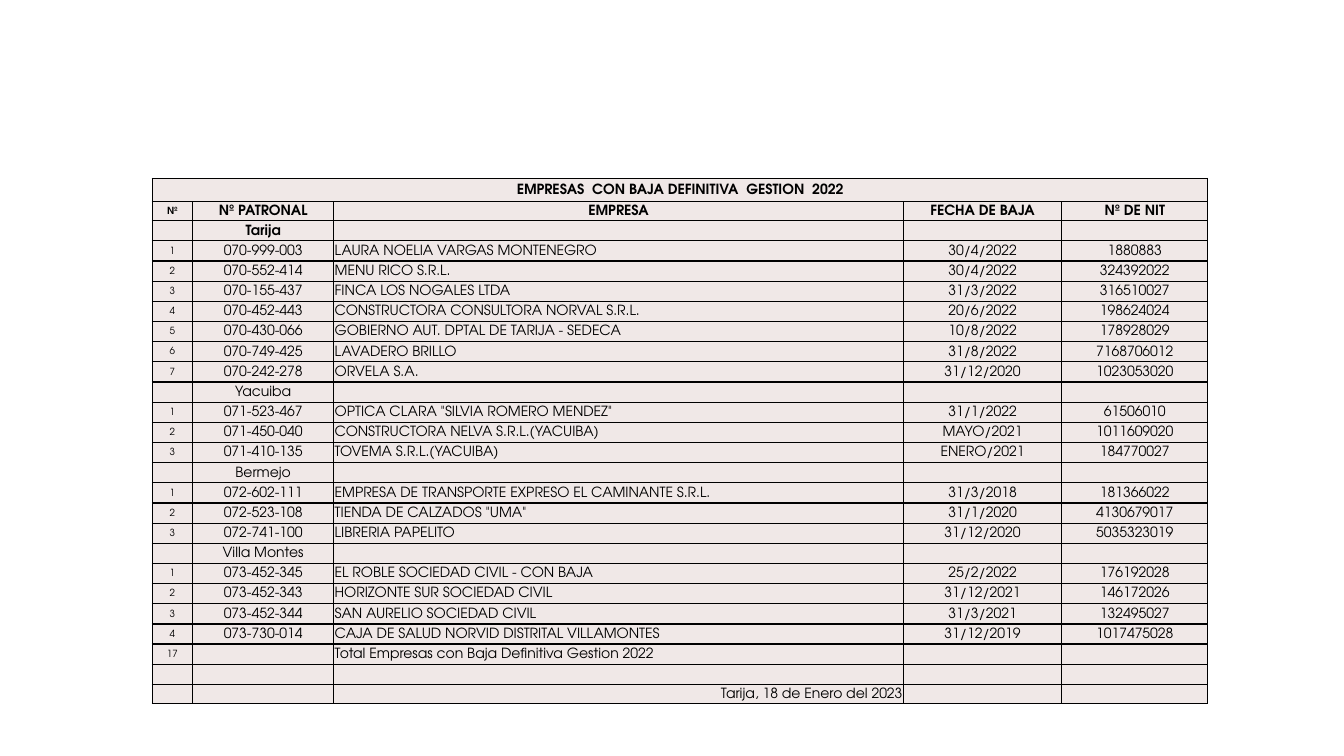
import pptx
import pptx.dml.color
import pptx.enum.text
import pptx.oxml
import pptx.oxml.ns
import pptx.util

Inches = pptx.util.Inches
Pt = pptx.util.Pt
RGBColor = pptx.dml.color.RGBColor
ALIGN = pptx.enum.text.PP_ALIGN

BLACK = RGBColor(0x00, 0x00, 0x00)
CELL_FILL = RGBColor(0xF0, 0xE8, 0xE7)
FONT_NAME = "TeX Gyre Adventor"
TEXT_SIZE = Pt(10)
NUMBER_SIZE = Pt(7)
BORDER_WIDTH = Pt(1)
COLUMN_WIDTHS = [0.4, 1.4, 5.65, 1.57, 1.45]
TITLE_HEIGHT, EDGE_HEIGHT, ROW_HEIGHT = 0.23, 0.19, 0.2
COMPANY_COLUMN = 2
BOLD_ROWS = 3
CELL_FORMAT = {
    "margin_left": Inches(0.01),
    "margin_right": Inches(0.01),
    "margin_top": Inches(0.01),
    "margin_bottom": 0,
    "vertical_anchor": pptx.enum.text.MSO_ANCHOR.MIDDLE,
}

TITLE = "EMPRESAS  CON BAJA DEFINITIVA  GESTION  2022"
HEADERS = ["Nº", "Nº PATRONAL", "EMPRESA", "FECHA DE BAJA", "Nº DE NIT"]
TOTAL = "Total Empresas con Baja Definitiva Gestion 2022"
DATE_LINE = "Tarija, 18 de Enero del 2023"
COMPANIES = {
    "Tarija": [
        ("070-999-003", "LAURA NOELIA VARGAS MONTENEGRO", "30/4/2022", "1880883"),
        ("070-552-414", "MENU RICO S.R.L.", "30/4/2022", "324392022"),
        ("070-155-437", "FINCA LOS NOGALES LTDA", "31/3/2022", "316510027"),
        ("070-452-443", "CONSTRUCTORA CONSULTORA NORVAL S.R.L.", "20/6/2022", "198624024"),
        ("070-430-066", "GOBIERNO AUT. DPTAL DE TARIJA - SEDECA", "10/8/2022", "178928029"),
        ("070-749-425", "LAVADERO BRILLO", "31/8/2022", "7168706012"),
        ("070-242-278", "ORVELA S.A.", "31/12/2020", "1023053020"),
    ],
    "Yacuiba": [
        ("071-523-467", 'OPTICA CLARA "SILVIA ROMERO MENDEZ"', "31/1/2022", "61506010"),
        ("071-450-040", "CONSTRUCTORA NELVA S.R.L.(YACUIBA)", "MAYO/2021", "1011609020"),
        ("071-410-135", "TOVEMA S.R.L.(YACUIBA)", "ENERO/2021", "184770027"),
    ],
    "Bermejo": [
        ("072-602-111", "EMPRESA DE TRANSPORTE EXPRESO EL CAMINANTE S.R.L.", "31/3/2018", "181366022"),
        ("072-523-108", 'TIENDA DE CALZADOS "UMA"', "31/1/2020", "4130679017"),
        ("072-741-100", "LIBRERIA PAPELITO", "31/12/2020", "5035323019"),
    ],
    "Villa Montes": [
        ("073-452-345", "EL ROBLE SOCIEDAD CIVIL - CON BAJA", "25/2/2022", "176192028"),
        ("073-452-343", "HORIZONTE SUR SOCIEDAD CIVIL", "31/12/2021", "146172026"),
        ("073-452-344", "SAN AURELIO SOCIEDAD CIVIL", "31/3/2021", "132495027"),
        ("073-730-014", "CAJA DE SALUD NORVID DISTRITAL VILLAMONTES", "31/12/2019", "1017475028"),
    ],
}


def set_attributes(target, values):
    """Set every attribute named in a dict of format values."""
    for name, value in values.items():
        setattr(target, name, value)


def build_rows():
    """Return the text of every table row, from title to date line."""
    rows = [[TITLE, "", "", "", ""], HEADERS]
    for city, companies in COMPANIES.items():
        rows.append(["", city, "", "", ""])
        rows.extend([str(number), *company] for number, company in enumerate(companies, 1))
    count = sum(len(companies) for companies in COMPANIES.values())
    rows.append([str(count), "", TOTAL, "", ""])
    rows.append([""] * len(HEADERS))
    rows.append(["", "", DATE_LINE, "", ""])
    return rows


def add_borders(cell):
    """Draw a solid black line on the four sides of a cell."""
    properties = cell._tc.get_or_add_tcPr()
    for side in ("lnL", "lnR", "lnT", "lnB"):
        properties.append(pptx.oxml.parse_xml(
            f'<a:{side} {pptx.oxml.ns.nsdecls("a")} w="{BORDER_WIDTH}">'
            f'<a:solidFill><a:srgbClr val="{BLACK}"/></a:solidFill></a:{side}>'))


def write_cell(cell, text, size, bold, alignment):
    """Format one cell and write its text."""
    add_borders(cell)
    cell.fill.solid()
    cell.fill.fore_color.rgb = CELL_FILL
    set_attributes(cell, CELL_FORMAT)
    paragraph = cell.text_frame.paragraphs[0]
    paragraph.alignment = alignment
    if text:
        run = paragraph.add_run()
        run.text = text
        set_attributes(run.font, {"name": FONT_NAME, "size": size, "bold": bold})
        run.font.color.rgb = BLACK
    else:
        paragraph._p.append(pptx.oxml.parse_xml(
            f'<a:endParaRPr {pptx.oxml.ns.nsdecls("a")} sz="{int(size.pt * 100)}"/>'))


def choose_alignment(text, row_index, column_index):
    """Return the alignment that a cell takes from its place and text."""
    if text == DATE_LINE:
        return ALIGN.RIGHT
    if column_index == COMPANY_COLUMN and row_index > 1:
        return ALIGN.LEFT
    return ALIGN.CENTER


def add_company_table(slide, left, top, width):
    """Build the table of companies in the given box."""
    rows = build_rows()
    heights = [TITLE_HEIGHT, EDGE_HEIGHT] + [ROW_HEIGHT] * (len(rows) - 3) + [EDGE_HEIGHT]
    shape = slide.shapes.add_table(
        len(rows), len(HEADERS), Inches(left), Inches(top), Inches(width), Inches(sum(heights)))
    table = shape.table
    set_attributes(table, {"first_row": False, "horz_banding": False})
    for column, share in zip(table.columns, COLUMN_WIDTHS):
        column.width = Inches(width * share / sum(COLUMN_WIDTHS))
    for row_index, (row, height) in enumerate(zip(rows, heights)):
        table.rows[row_index].height = Inches(height)
        for column_index, text in enumerate(row):
            small = column_index == 0 and row_index > 0
            write_cell(
                table.cell(row_index, column_index), text,
                NUMBER_SIZE if small else TEXT_SIZE, row_index < BOLD_ROWS,
                choose_alignment(text, row_index, column_index))
    table.cell(0, 0).merge(table.cell(0, len(HEADERS) - 1))


def main():
    """Create the presentation and save it."""
    presentation = pptx.Presentation()
    presentation.slide_width = Inches(13.33)
    presentation.slide_height = Inches(7.5)
    slide = presentation.slides.add_slide(presentation.slide_layouts[6])
    add_company_table(slide, left=1.51, top=1.77, width=10.47)
    presentation.save("out.pptx")


if __name__ == "__main__":
    main()
